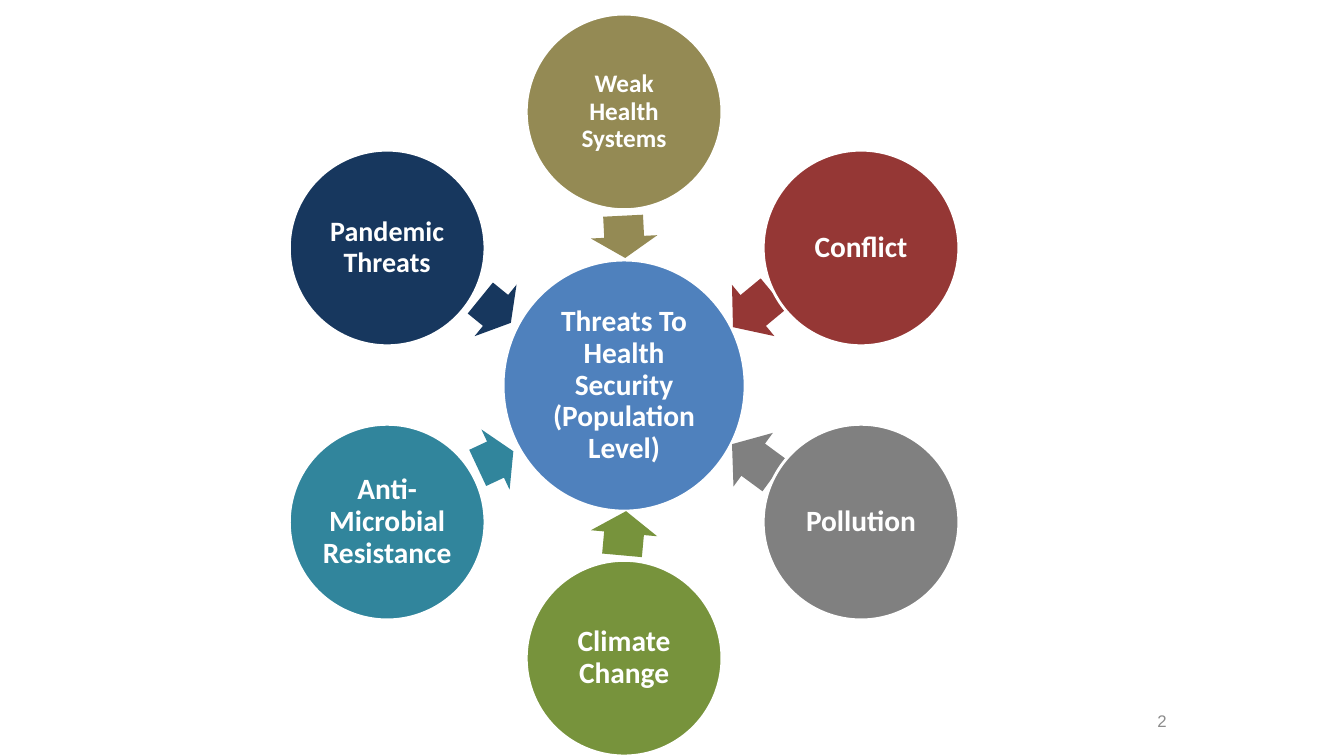
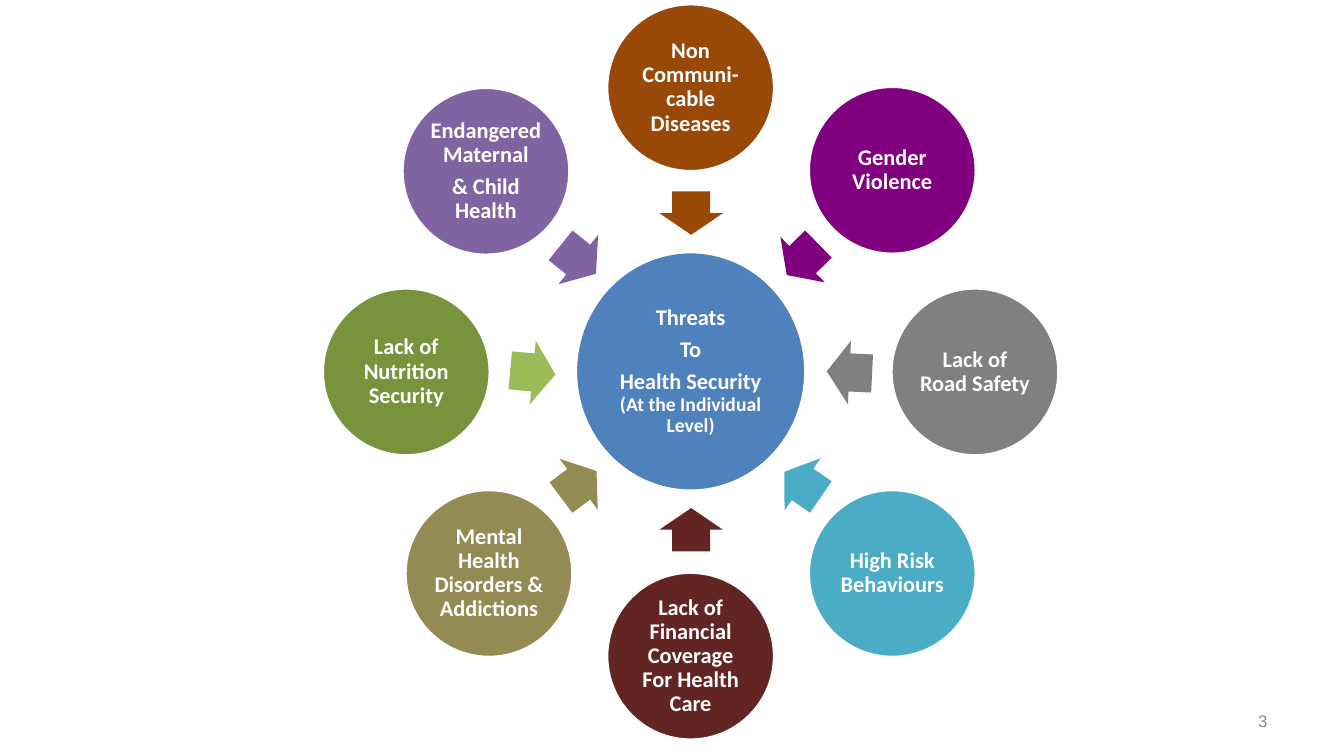
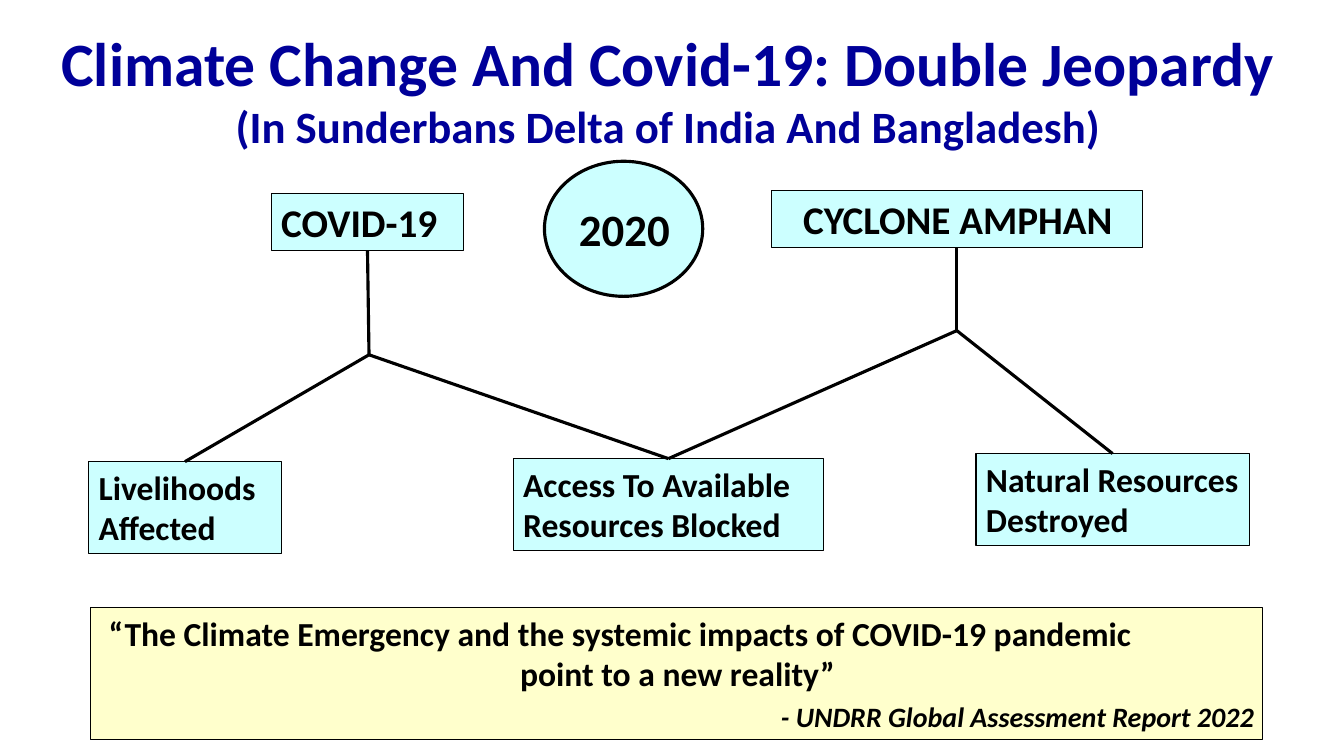
from dataclasses import dataclass
from math import cos, radians, sin

from lxml import etree
from pptx import Presentation
from pptx.dml.color import RGBColor
from pptx.enum.shapes import MSO_CONNECTOR, MSO_SHAPE
from pptx.enum.text import MSO_ANCHOR, MSO_AUTO_SIZE, PP_ALIGN
from pptx.oxml.ns import qn
from pptx.shapes.autoshape import Shape
from pptx.slide import Slide
from pptx.text.text import TextFrame
from pptx.util import Pt

EMU_PER_PX = 9144  # 100 px to the inch
OVAL, RECT, ARROW = MSO_SHAPE.OVAL, MSO_SHAPE.RECTANGLE, MSO_SHAPE.RIGHT_ARROW
STRAIGHT = MSO_CONNECTOR.STRAIGHT
LEFT, CENTER, RIGHT = PP_ALIGN.LEFT, PP_ALIGN.CENTER, PP_ALIGN.RIGHT
TOP, MIDDLE = MSO_ANCHOR.TOP, MSO_ANCHOR.MIDDLE
TITLE_ONLY, BLANK = 5, 6
SITE_TOP, SITE_BOTTOM = 0, 2

Rect = tuple[int, int, int, int]
Point = tuple[int, int]


# Theme
@dataclass(frozen=True)
class Theme:
    font: str = "Calibri"
    number_font: str = "Arial"
    white: str = "FFFFFF"
    black: str = "000000"
    title: str = "000099"
    number: str = "8C8C8C"
    hub: str = "4F81BD"
    box: str = "CCFFFF"
    quote: str = "FFFFCC"
    khaki: str = "948A54"
    grey: str = "808080"
    green: str = "77933C"
    title_size: int = 44
    subtitle_size: int = 32
    cause_size: int = 28
    body_size: int = 24
    source_size: int = 20
    note_size: int = 14
    number_size: int = 12
    ring_line: float = 2
    thin_line: float = 0.75
    thick_line: float = 2.25


T = Theme()


# Repeated elements
@dataclass(frozen=True)
class Para:
    text: str
    size: int
    color: str = T.black
    align: PP_ALIGN = LEFT
    bold: bool = True
    italic: bool = False
    font: str = T.font
    spacing: float = 1.0
    before: float = 0
    after: float = 0
    indent: int = 0


@dataclass(frozen=True)
class Threat:
    lines: tuple[str, ...]
    color: str
    arrow_length: int
    arrow_turn: float
    size: int = 0
    arrow_color: str = ""
    shift: Point = (0, 0)


@dataclass(frozen=True)
class Ring:
    number: str
    number_left: int
    center: Point
    hub_size: Point
    hub_lines: tuple[str, ...]
    hub_note: str
    size: int
    inset: int
    radius: float
    diameter: int
    arrow_radius: float
    arrow_height: int
    threats: tuple[Threat, ...]


@dataclass(frozen=True)
class Cause:
    rect: Rect
    text: str
    align: PP_ALIGN
    fork: Point
    effects: tuple[str, ...]


# Helpers
def px(n: float) -> int:
    return round(n * EMU_PER_PX)


def rgb(color: str) -> RGBColor:
    return RGBColor.from_string(color)


def centered(x: float, y: float, w: int, h: int) -> Rect:
    return round(x - w / 2), round(y - h / 2), w, h


def write(tf: TextFrame, paras: list[Para], anchor: MSO_ANCHOR = TOP,
          insets: Rect = (10, 5, 8, 5)) -> None:
    tf.word_wrap = True
    tf.auto_size = MSO_AUTO_SIZE.NONE
    tf.vertical_anchor = anchor
    (tf.margin_left, tf.margin_top,
     tf.margin_right, tf.margin_bottom) = (px(n) for n in insets)
    for i, para in enumerate(paras):
        p = tf.add_paragraph() if i else tf.paragraphs[0]
        p.add_run().text = para.text
        p.alignment = para.align
        p.line_spacing = para.spacing
        p.space_before, p.space_after = Pt(para.before), Pt(para.after)
        p.font.name, p.font.size = para.font, Pt(para.size)
        p.font.bold, p.font.italic = para.bold, para.italic
        p.font.color.rgb = rgb(para.color)
        if para.indent:
            p._p.get_or_add_pPr().set("marL", str(px(para.indent)))


def add_shape(slide: Slide, kind: MSO_SHAPE, rect: Rect, fill: str,
              line: str = "", width: float = 0) -> Shape:
    s = slide.shapes.add_shape(kind, *(px(n) for n in rect))
    s.shadow.inherit = False
    s.fill.solid()
    s.fill.fore_color.rgb = rgb(fill)
    if line:
        s.line.color.rgb = rgb(line)
        s.line.width = Pt(width)
    else:
        s.line.fill.background()
    return s


def add_box(slide: Slide, rect: Rect, paras: list[Para], fill: str = T.box) -> Shape:
    s = add_shape(slide, RECT, rect, fill, T.black, T.thin_line)
    write(s.text_frame, paras)
    return s


def add_line(slide: Slide, start: Point, end: Point, from_box: Shape | None = None,
             to_box: Shape | None = None) -> None:
    c = slide.shapes.add_connector(STRAIGHT, *(px(n) for n in start + end))
    c.line.color.rgb = rgb(T.black)
    c.line.width = Pt(T.thick_line)
    etree.SubElement(c._element.spPr, qn("a:effectLst"))
    if from_box:
        c.begin_connect(from_box, SITE_BOTTOM)
    if to_box:
        c.end_connect(to_box, SITE_TOP)


def add_circle(slide: Slide, ring: Ring, rect: Rect, fill: str,
               lines: tuple[str, ...], size: int) -> Shape:
    s = add_shape(slide, OVAL, rect, fill, T.white, T.ring_line)
    paras = [Para(line, size, T.white, CENTER, spacing=0.9,
                  after=round(size * 0.35, 1) if line != lines[-1] else 0)
             for line in lines]
    write(s.text_frame, paras, MIDDLE, (ring.inset,) * 4)
    return s


def add_number(slide: Slide, text: str, left: int) -> None:
    s = slide.shapes.add_textbox(px(left), px(695), px(311), px(40))
    write(s.text_frame, [Para(text, T.number_size, T.number, RIGHT, bold=False,
                              font=T.number_font)], MIDDLE, (10, 5, 10, 5))


# Ring slides: a hub, with threats spaced evenly clockwise from the top
def draw_ring(slide: Slide, ring: Ring) -> None:
    cx, cy = ring.center
    hub = add_circle(slide, ring, centered(cx, cy, *ring.hub_size), T.hub,
                     ring.hub_lines, ring.size)
    if ring.hub_note:
        r = hub.text_frame.paragraphs[-1].add_run()
        r.text = ring.hub_note
        r.font.size = Pt(T.note_size)
    for i, threat in enumerate(ring.threats):
        angle = radians(360 * i / len(ring.threats))
        dx, dy = sin(angle), -cos(angle)
        arrow = add_shape(slide, ARROW, centered(
            cx + ring.arrow_radius * dx, cy + ring.arrow_radius * dy,
            threat.arrow_length, ring.arrow_height), threat.arrow_color or threat.color)
        arrow.adjustments[0], arrow.adjustments[1] = 0.6, 0.5
        arrow.rotation = threat.arrow_turn
        x, y = threat.shift
        add_circle(slide, ring, centered(
            cx + x + ring.radius * dx, cy + y + ring.radius * dy,
            ring.diameter, ring.diameter), threat.color, threat.lines,
            threat.size or ring.size)
    add_number(slide, ring.number, ring.number_left)


POPULATION = Ring(
    "2", 856, (619, 382), (240, 249),
    ("Threats To Health Security (Population Level)",), "",
    21, 3, 271.5, 194, 147.5, 66,
    (Threat(("Weak Health Systems",), T.khaki, 42, 87.1, size=18),
     Threat(("Conflict",), "953735", 52, 140.4),
     Threat(("Pollution",), T.grey, 52, 216.3),
     Threat(("Climate Change",), T.green, 44, 275.2),
     Threat(("Anti-Microbial Resistance",), "31859C", 39, 334.9),
     Threat(("Pandemic Threats",), "17375E", 39, 39.1, size=20)))

INDIVIDUAL = Ring(
    "3", 956, (685, 369), (228, 237),
    ("Threats", "To", "Health Security "), "(At the Individual Level)",
    16, 2, 282.5, 166, 157, 63,
    (Threat(("Non Communi-cable Diseases",), "984807", 43, 90),
     Threat(("Gender Violence",), "800080", 44, 135.7),
     Threat(("Lack of Road Safety",), T.grey, 45, 182.8),
     Threat(("High Risk Behaviours",), "4BACC6", 44, 214.5),
     Threat(("Lack of Financial Coverage For Health Care",), "632523", 43, 270),
     Threat(("Mental Health Disorders & Addictions",), T.khaki, 44, 323.2),
     Threat(("Lack of Nutrition Security",), T.green, 45, 5.3, arrow_color="9BBB59"),
     Threat(("Endangered Maternal", "& Child Health"), "8064A2", 45, 38.8,
            shift=(-3, 1))))


# Cause and effect slide
EFFECTS: dict[str, tuple[Rect, tuple[str, ...]]] = {
    "livelihoods": ((88, 458, 191, 91), ("Livelihoods", "Affected")),
    "access": ((509, 455, 308, 91), ("Access To Available Resources Blocked",)),
    "nature": ((968, 450, 271, 91), ("Natural Resources Destroyed",)),
}
CAUSES = (
    Cause((269, 192, 191, 57), "COVID-19", LEFT, (366, 352), ("livelihoods", "access")),
    Cause((765, 189, 368, 57), "CYCLONE AMPHAN", CENTER, (949, 328), ("access", "nature")),
)


def draw_jeopardy(slide: Slide) -> None:
    # Title
    title = slide.shapes.title
    title.left, title.top, title.width, title.height = (
        px(n) for n in (37, 20, 1252, 138))
    write(title.text_frame, [
        Para("Climate Change And Covid-19: Double Jeopardy", T.title_size, T.title, CENTER),
        Para("(In Sunderbans Delta of India And Bangladesh)", T.subtitle_size,
             T.title, CENTER)], insets=(10, 5, 10, 5))

    # Year
    year = add_shape(slide, OVAL, (540, 160, 157, 134), T.box, T.black, T.thick_line)
    write(year.text_frame, [Para("2020", T.subtitle_size, align=CENTER)], MIDDLE)

    # Boxes and the lines that fork between them
    effects = {key: add_box(slide, rect, [Para(line, T.body_size) for line in lines])
               for key, (rect, lines) in EFFECTS.items()}
    for cause in CAUSES:
        box = add_box(slide, cause.rect, [Para(cause.text, T.cause_size, align=cause.align)])
        add_line(slide, cause.fork, cause.fork, from_box=box)
        for key in cause.effects:
            add_line(slide, cause.fork, cause.fork, to_box=effects[key])

    # Quote
    add_box(slide, (90, 603, 1162, 131), [
        Para("“The Climate Emergency and the systemic impacts of COVID-19 pandemic",
             T.body_size, indent=8),
        Para("point to a new reality”", T.body_size, align=CENTER),
        Para("- UNDRR Global Assessment Report 2022", T.source_size, align=RIGHT,
             italic=True, before=4)], T.quote)


def main() -> None:
    prs = Presentation()
    prs.slide_width, prs.slide_height = px(1333), px(750)
    for ring in (POPULATION, INDIVIDUAL):
        draw_ring(prs.slides.add_slide(prs.slide_layouts[BLANK]), ring)
    draw_jeopardy(prs.slides.add_slide(prs.slide_layouts[TITLE_ONLY]))
    prs.save("out.pptx")


if __name__ == "__main__":
    main()
